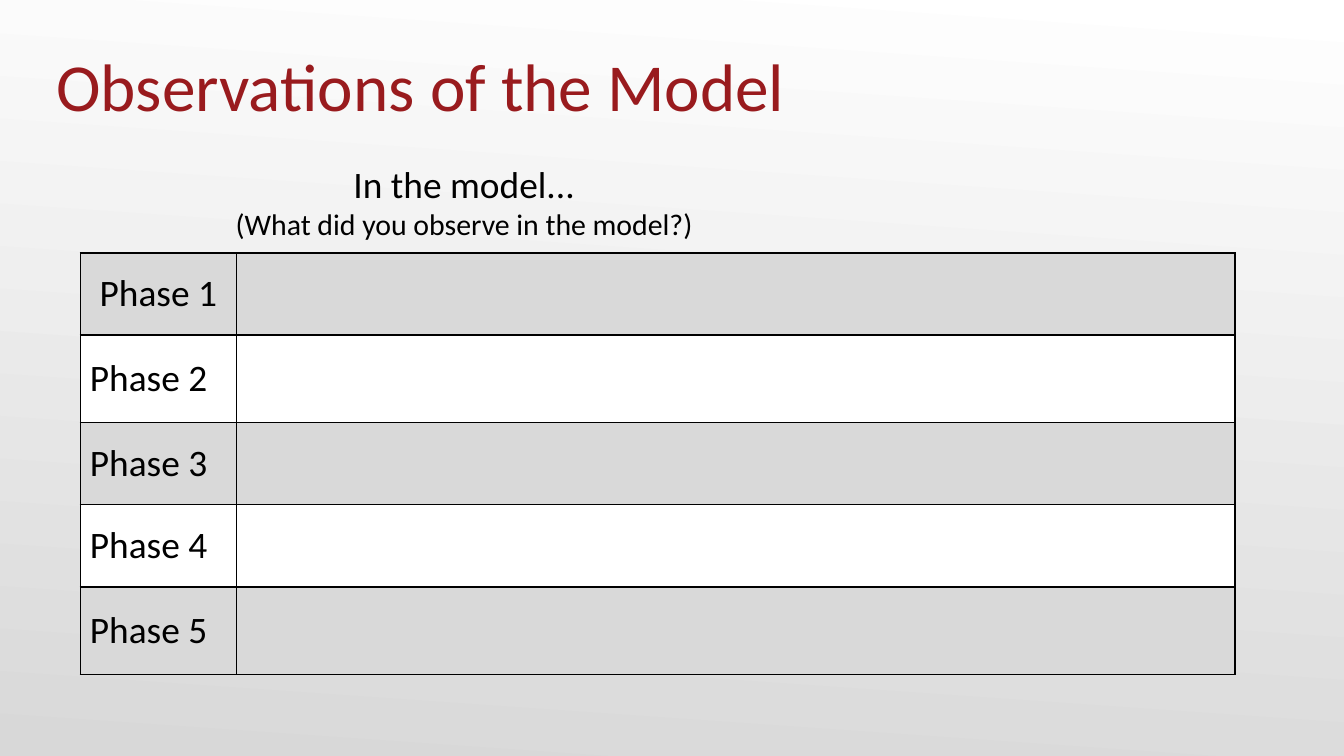
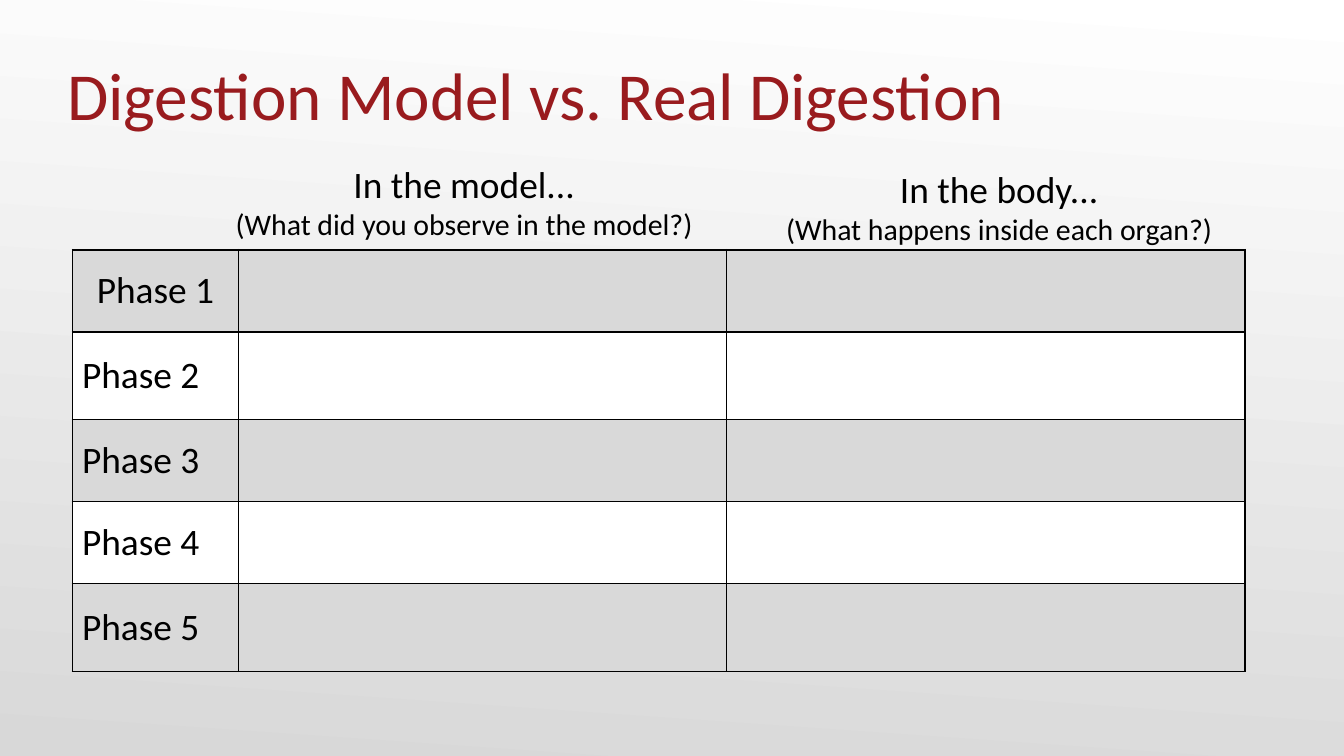
from pptx import Presentation
from pptx.dml.color import RGBColor
from pptx.enum.text import MSO_ANCHOR as Anchor, PP_ALIGN as Align
from pptx.oxml import parse_xml
from pptx.oxml.ns import nsdecls
from pptx.util import Cm, Pt

# Shared style
FONT = "Calibri"
RED = RGBColor(0x99, 0x1B, 0x1E)
BLACK = RGBColor(0x00, 0x00, 0x00)
WHITE = RGBColor(0xFF, 0xFF, 0xFF)
BAND_GRAY = RGBColor(0xD9, 0xD9, 0xD9)
BACKGROUND_GRAY = RGBColor(0xD8, 0xD8, 0xD8)

TITLE_SIZE, HEADING_SIZE, QUESTION_SIZE = 36, 20, 16
HEADING_TOP = 3.05
ROW_HEIGHTS = [1.55, 1.66, 1.55, 1.55, 1.66]

MODEL_HEADING = ("In the model...", "(What did you observe in the model?)")
BODY_HEADING = ("In the body...", "(What happens inside each organ?)")


def add_text(paragraph, text, *, size=HEADING_SIZE, color=BLACK, align=Align.LEFT):
    paragraph.alignment = align
    run = paragraph.add_run()
    run.text = text
    run.font.name = FONT
    run.font.size = Pt(size)
    run.font.color.rgb = color


def set_margins(target, left, top, right, bottom):
    """Set the insets, in centimetres, of a text frame or a table cell."""
    target.margin_left, target.margin_top = Cm(left), Cm(top)
    target.margin_right, target.margin_bottom = Cm(right), Cm(bottom)


def add_text_frame(slide, left, top, width, height, margins, anchor):
    shape = slide.shapes.add_textbox(Cm(left), Cm(top), Cm(width), Cm(height))
    frame = shape.text_frame
    frame.word_wrap = True
    frame.vertical_anchor = anchor
    set_margins(frame, *margins)
    return frame


def add_title(slide, text, left, top):
    frame = add_text_frame(slide, left, top, 22.86, 1.7, (0, 0.13, 0, 0), Anchor.MIDDLE)
    add_text(frame.paragraphs[0], text, size=TITLE_SIZE, color=RED)


def add_column_heading(slide, lines, left, anchor=Anchor.TOP):
    heading, question = lines
    frame = add_text_frame(slide, left, HEADING_TOP, 9.27, 1.7, (0.13, 0, 0.13, 0), anchor)
    add_text(frame.paragraphs[0], heading, align=Align.CENTER)
    add_text(frame.add_paragraph(), question, size=QUESTION_SIZE, align=Align.CENTER)


def add_cell_borders(cell):
    properties = cell._tc.get_or_add_tcPr()
    for side in ("lnL", "lnR", "lnT", "lnB"):
        properties.append(parse_xml(
            f'<a:{side} {nsdecls("a")} w="{Pt(1)}"><a:solidFill>'
            f'<a:srgbClr val="{BLACK}"/></a:solidFill></a:{side}>'))


def add_phase_table(slide, left, top, column_widths):
    table = slide.shapes.add_table(
        len(ROW_HEIGHTS), len(column_widths), Cm(left), Cm(top),
        Cm(sum(column_widths)), Cm(sum(ROW_HEIGHTS))).table
    table.first_row = table.horz_banding = False
    for column, width in zip(table.columns, column_widths):
        column.width = Cm(width)

    for index, (row, height) in enumerate(zip(table.rows, ROW_HEIGHTS)):
        row.height = Cm(height)
        for cell in row.cells:
            add_cell_borders(cell)
            cell.fill.solid()
            cell.fill.fore_color.rgb = WHITE if index % 2 else BAND_GRAY

        # The first label is centred, the others are on the left
        label = row.cells[0]
        label.vertical_anchor = Anchor.MIDDLE
        set_margins(label, *((0.18, 0, 0.18, 0) if index else (0.25, 0.13, 0.25, 0.13)))
        add_text(label.text_frame.paragraphs[0], f"Phase {index + 1}",
                 align=Align.LEFT if index else Align.CENTER)


def add_slide(presentation):
    slide = presentation.slides.add_slide(presentation.slide_layouts[6])
    fill = slide.background.fill
    fill.gradient()
    fill.gradient_angle = 266  # counter-clockwise: white on top, gray below
    for stop, position, color in zip(fill.gradient_stops, (0, 1), (WHITE, BACKGROUND_GRAY)):
        stop.position = position
        stop.color.rgb = color
    return slide


def main():
    presentation = Presentation()
    presentation.slide_width, presentation.slide_height = Cm(25.4), Cm(14.29)

    # Slide 1: observations
    slide = add_slide(presentation)
    add_column_heading(slide, MODEL_HEADING, 4.14)
    add_phase_table(slide, 1.52, 4.78, [2.95, 18.87])
    add_title(slide, "Observations of the Model", 1.07, 0.69)

    # Slide 2: model compared with the body
    slide = add_slide(presentation)
    add_title(slide, "Digestion Model vs. Real Digestion", 1.27, 0.86)
    add_column_heading(slide, MODEL_HEADING, 4.14)
    add_column_heading(slide, BODY_HEADING, 14.25, Anchor.MIDDLE)
    add_phase_table(slide, 1.37, 4.72, [3.14, 9.22, 9.8])

    presentation.save("out.pptx")


if __name__ == "__main__":
    main()
